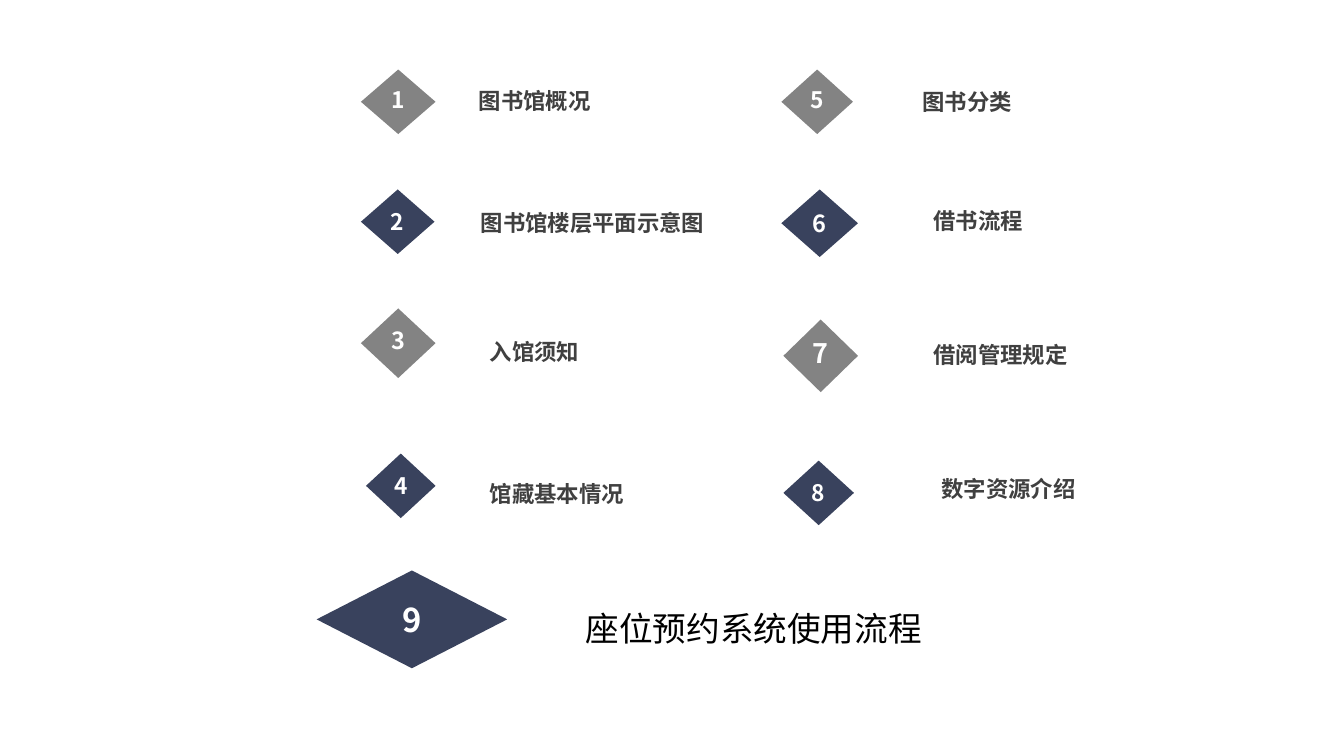
"""Build a library guide contents slide with nine numbered diamonds."""
from dataclasses import dataclass

from lxml import etree
from pptx import Presentation
from pptx.dml.color import RGBColor
from pptx.enum.shapes import MSO_SHAPE
from pptx.enum.text import MSO_ANCHOR, MSO_AUTO_SIZE, PP_ALIGN
from pptx.oxml.ns import qn
from pptx.util import Inches, Pt

DIAMOND = MSO_SHAPE.DIAMOND
MIDDLE = MSO_ANCHOR.MIDDLE
FIT_SHAPE = MSO_AUTO_SIZE.SHAPE_TO_FIT_TEXT
CENTER = PP_ALIGN.CENTER

NAVY = RGBColor(0x39, 0x42, 0x5D)
GRAY = RGBColor(0x83, 0x83, 0x83)
DARK = RGBColor(0x40, 0x40, 0x40)
BLACK = RGBColor(0, 0, 0)
WHITE = RGBColor(0xFF, 0xFF, 0xFF)
FONT = "Noto Sans CJK SC"


@dataclass(frozen=True)
class Diamond:
    """Numbered marker, in inches and points."""
    left: float
    top: float
    width: float
    height: float
    size: float = 16.2
    color: RGBColor = NAVY


@dataclass(frozen=True)
class Label:
    """Entry text, in inches and points."""
    text: str
    left: float
    top: float
    width: float
    height: float = 0.37
    size: float = 16
    color: RGBColor = DARK
    bold: bool = True


ENTRIES = [
    (Diamond(3.58, 0.69, 0.74, 0.64, color=GRAY), Label("图书馆概况", 4.65, 0.82, 1.31)),
    (Diamond(3.58, 1.88, 0.73, 0.64), Label("图书馆楼层平面示意图", 4.67, 2.03, 2.42)),
    (Diamond(3.58, 3.06, 0.74, 0.69, 16.8, GRAY), Label("入馆须知", 4.76, 3.31, 1.09)),
    (Diamond(3.63, 4.5, 0.69, 0.64), Label("馆藏基本情况", 4.76, 4.71, 1.53)),
    (Diamond(7.75, 0.69, 0.71, 0.64, color=GRAY), Label("图书分类", 9.05, 0.83, 1.09)),
    (Diamond(7.75, 1.88, 0.76, 0.67, 16.8), Label("借书流程", 9.16, 2.01, 1.09)),
    (Diamond(7.77, 3.17, 0.74, 0.72, 19.2, GRAY), Label("借阅管理规定", 9.16, 3.34, 1.53)),
    (Diamond(7.77, 4.57, 0.7, 0.64), Label("数字资源介绍", 9.24, 4.66, 1.53)),
    (Diamond(3.14, 5.66, 1.89, 0.97, 23.4),
     Label("座位预约系统使用流程", 5.71, 5.98, 4.34, 0.5, 24, BLACK, False)),
]


def box(item: Diamond | Label) -> tuple:
    """Return left, top, width and height as lengths."""
    return tuple(Inches(value) for value in (item.left, item.top, item.width, item.height))


def write(frame, text: str, size: float, color: RGBColor, bold: bool):
    """Write one styled paragraph and return it."""
    frame.word_wrap = False
    paragraph = frame.paragraphs[0]
    paragraph.text = text
    font = paragraph.font
    font.name = FONT
    font.size = Pt(size)
    font.bold = bold
    font.color.rgb = color
    properties = paragraph._p.get_or_add_pPr().find(qn("a:defRPr"))
    etree.SubElement(properties, qn("a:ea")).set("typeface", FONT)
    return paragraph


def draw_diamond(slide, number: int, diamond: Diamond) -> None:
    """Draw a diamond with its number."""
    shape = slide.shapes.add_shape(DIAMOND, *box(diamond))
    shape.shadow.inherit = False
    shape.fill.solid()
    shape.fill.fore_color.rgb = diamond.color
    shape.line.fill.background()
    shape.text_frame.vertical_anchor = MIDDLE
    paragraph = write(shape.text_frame, str(number), diamond.size, WHITE, True)
    paragraph.alignment = CENTER
    if diamond.color == GRAY:
        paragraph.line_spacing = 0.8


def draw_label(slide, label: Label) -> None:
    """Draw the text of an entry."""
    frame = slide.shapes.add_textbox(*box(label)).text_frame
    write(frame, label.text, label.size, label.color, label.bold)
    frame.auto_size = FIT_SHAPE
    frame.word_wrap = label.size > 16


def main() -> None:
    """Build and save the presentation."""
    presentation = Presentation()
    presentation.slide_width = Inches(13.33)
    presentation.slide_height = Inches(7.5)
    slide = presentation.slides.add_slide(presentation.slide_layouts[6])
    for number, (diamond, label) in enumerate(ENTRIES, 1):
        draw_diamond(slide, number, diamond)
        draw_label(slide, label)
    presentation.save("out.pptx")


if __name__ == "__main__":
    main()
